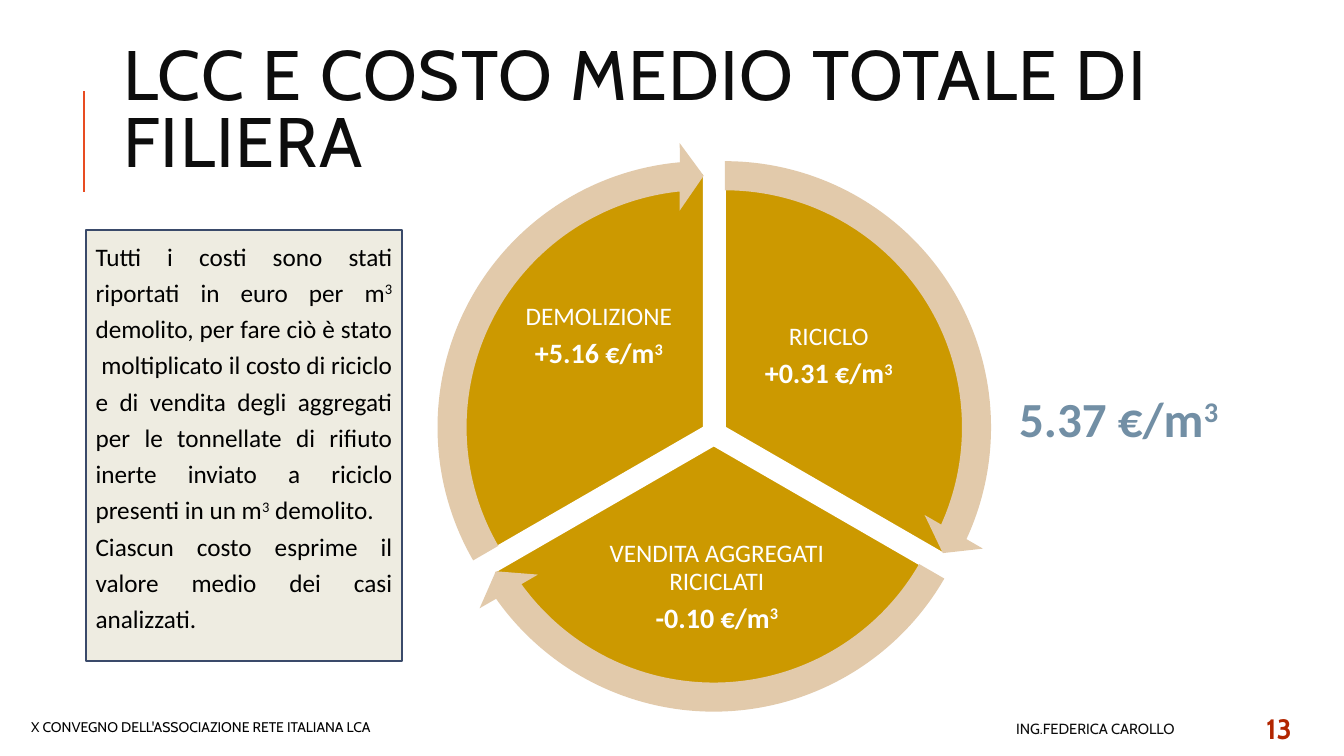
import lxml.etree
import pptx
import pptx.dml.color
import pptx.enum.shapes
import pptx.enum.text
import pptx.oxml.ns
import pptx.util

Inches = pptx.util.Inches
Pt = pptx.util.Pt
RGB = pptx.dml.color.RGBColor
SHAPE = pptx.enum.shapes.MSO_SHAPE
ALIGN = pptx.enum.text.PP_ALIGN
ANCHOR = pptx.enum.text.MSO_ANCHOR

WHITE = RGB(0xFF, 0xFF, 0xFF)
BLACK = RGB(0, 0, 0)
INK = RGB(0x0D, 0x0D, 0x0D)
ORANGE = RGB(0xE8, 0x4C, 0x22)
RED = RGB(0xB2, 0x26, 0x00)
GOLD = RGB(0xCC, 0x99, 0x00)
SAND = RGB(0xE2, 0xCA, 0xAB)
STEEL = RGB(0x72, 0x8F, 0xA5)
CREAM = RGB(0xEE, 0xEC, 0xE1)
NAVY = RGB(0x3A, 0x4A, 0x6A)

DEGREE = 0.6
HEAD = 3.275


def add_run(para, text, font, size, color, bold=False, raised=False):
    """Add one formatted run, raised when it is an exponent."""
    run = para.add_run()
    run.text = text
    run.font.name = font
    run.font.size = Pt(size)
    run.font.bold = bold
    run.font.color.rgb = color
    if raised:
        run.font._element.set("baseline", "30000")
    return run


def add_cubed(para, text, size, color, bold=False):
    """Add Calibri text in which each ^ stands for a raised 3."""
    for index, part in enumerate(text.split("^")):
        if index:
            add_run(para, "3", "Calibri", size, color, bold, True)
        if part:
            add_run(para, part, "Calibri", size, color, bold)


def add_box(slide, box, anchor=ANCHOR.TOP, inset=None):
    """Add a wrapping text box and return its frame."""
    frame = slide.shapes.add_textbox(*map(Inches, box)).text_frame
    frame.word_wrap = True
    frame.vertical_anchor = anchor
    if inset is not None:
        frame.margin_left = frame.margin_right = Inches(inset)
        frame.margin_top = frame.margin_bottom = Inches(inset)
    return frame


def add_form(slide, kind, box, fill, line=None):
    """Add a flat preset shape with an optional outline."""
    form = slide.shapes.add_shape(kind, *map(Inches, box))
    form.shadow.inherit = False
    form.fill.solid()
    form.fill.fore_color.rgb = fill
    if line is None:
        form.line.fill.background()
    else:
        form.line.color.rgb = line
        form.line.width = Pt(1.25)
    return form


def add_title(slide, box):
    """Place the title and the accent rule at its left."""
    left, top, width, height = box
    title = slide.shapes.title
    title.left, title.top, title.width, title.height = map(Inches, box)
    frame = title.text_frame
    frame.word_wrap = True
    frame.auto_size = pptx.enum.text.MSO_AUTO_SIZE.NONE
    frame.vertical_anchor = ANCHOR.MIDDLE
    para = frame.paragraphs[0]
    para.alignment = ALIGN.LEFT
    para.line_spacing = 0.8
    run = add_run(para, "LCC E COSTO MEDIO TOTALE DI FILIERA", "Cabin", 50, INK)
    run.font._element.set("spc", "100")
    x = Inches(left - 0.29)
    rule = slide.shapes.add_connector(
        pptx.enum.shapes.MSO_CONNECTOR.STRAIGHT,
        x, Inches(top + 1.59), x, Inches(top + 0.59))
    rule.line.color.rgb = ORANGE
    rule.line.width = Pt(1.5)
    lxml.etree.SubElement(rule._element.spPr, pptx.oxml.ns.qn("a:effectLst"))


def add_note(slide, box):
    """Add the framed note on how the costs are stated."""
    form = add_form(slide, SHAPE.RECTANGLE, box, CREAM, NAVY)
    frame = form.text_frame
    frame.word_wrap = True
    frame.vertical_anchor = ANCHOR.TOP
    texts = (
        "Tutti i costi sono stati riportati in euro per m^ demolito, "
        "per fare ciò è stato  moltiplicato il costo di riciclo e di "
        "vendita degli aggregati per le tonnellate di rifiuto inerte "
        "inviato a riciclo presenti in un m^ demolito.",
        "Ciascun costo esprime il valore medio dei casi analizzati.",
    )
    for index, text in enumerate(texts):
        para = frame.add_paragraph() if index else frame.paragraphs[0]
        para.alignment = ALIGN.JUSTIFY
        para.line_spacing = 1.2
        add_cubed(para, text, 18, BLACK)


def add_label(slide, box, name, cost):
    """Add a phase name above its cost."""
    frame = add_box(slide, box, ANCHOR.MIDDLE, 0.03)
    first, second = frame.paragraphs[0], frame.add_paragraph()
    for para in (first, second):
        para.alignment = ALIGN.CENTER
        para.line_spacing = 0.9
        para.space_after = Pt(6)
    add_cubed(first, name, 18, WHITE)
    add_cubed(second, cost, 20, WHITE, True)


def add_cycle(slide, box):
    """Add the three phases as wedges, each with a curved arrow."""
    left, top, width, height = box
    size, ring, edge = 5.04, 5.66, 0.31
    phases = (
        ("RICICLO", "+0.31 €/m^", 270, 30, 0.21, 0, (3.17, 1.38, 1.8, 1.5)),
        ("VENDITA AGGREGATI RICICLATI", "-0.10 €/m^", 30, 90 + 60, 0.1, 0.18,
         (1.61, 3.76, 2.7, 1.32)),
        ("DEMOLIZIONE", "+5.16 €/m^", 150, 270, 0, 0,
         (0.89, 1.18, 1.8, 1.5)),
    )
    for name, cost, start, end, dx, dy, spot in phases:
        x, y = left + dx, top + dy
        pie = add_form(slide, SHAPE.PIE,
                       (x + edge, y + edge, size, size), GOLD, WHITE)
        pie.adjustments[0] = start * DEGREE
        pie.adjustments[1] = end * DEGREE
        add_label(slide, (left + spot[0], top + spot[1], *spot[2:]), name, cost)
    for name, cost, start, end, dx, dy, spot in phases:
        arrow = add_form(slide, SHAPE.CIRCULAR_ARROW,
                         (left + dx, top + dy, ring, ring), SAND)
        values = (0.051, HEAD, end * DEGREE - HEAD, start * DEGREE, 0.059)
        for index, value in enumerate(values):
            arrow.adjustments[index] = value


def add_total(slide, box):
    """Add the total cost beside the cycle."""
    para = add_box(slide, box).paragraphs[0]
    para.line_spacing = 0.9
    add_cubed(para, "5.37 €/m^", 35, STEEL, True)


def add_footer(slide, box):
    """Add the event, the author and the page number."""
    left, top, width, height = box
    parts = (
        ("X CONVEGNO DELL'ASSOCIAZIONE RETE ITALIANA LCA", 0, 6.45, 10,
         BLACK, False, ALIGN.LEFT, ANCHOR.TOP),
        ("ING.FEDERICA CAROLLO", 5.09, 6.45, 10.5,
         INK, False, ALIGN.RIGHT, ANCHOR.MIDDLE),
        ("13", 11.64, 1.06, 20, RED, True, ALIGN.RIGHT, ANCHOR.MIDDLE),
    )
    for text, dx, wide, size, color, bold, align, anchor in parts:
        frame = add_box(slide, (left + dx, top, wide, height), anchor)
        para = frame.paragraphs[0]
        para.alignment = align
        add_run(para, text, "Cabin", size, color, bold)


def main():
    """Build and save the slide."""
    deck = pptx.Presentation()
    deck.slide_width = Inches(13.33)
    deck.slide_height = Inches(7.5)
    slide = deck.slides.add_slide(deck.slide_layouts[5])
    add_title(slide, (1.12, 0.31, 10.63, 1.64))
    add_footer(slide, (0.21, 7.08, 12.7, 0.3))
    add_cycle(slide, (4.15, 1.41, 5.87, 5.84))
    add_total(slide, (10.01, 3.87, 3.14, 0.65))
    add_note(slide, (0.85, 2.28, 3.14, 4.28))
    deck.save("out.pptx")


if __name__ == "__main__":
    main()
